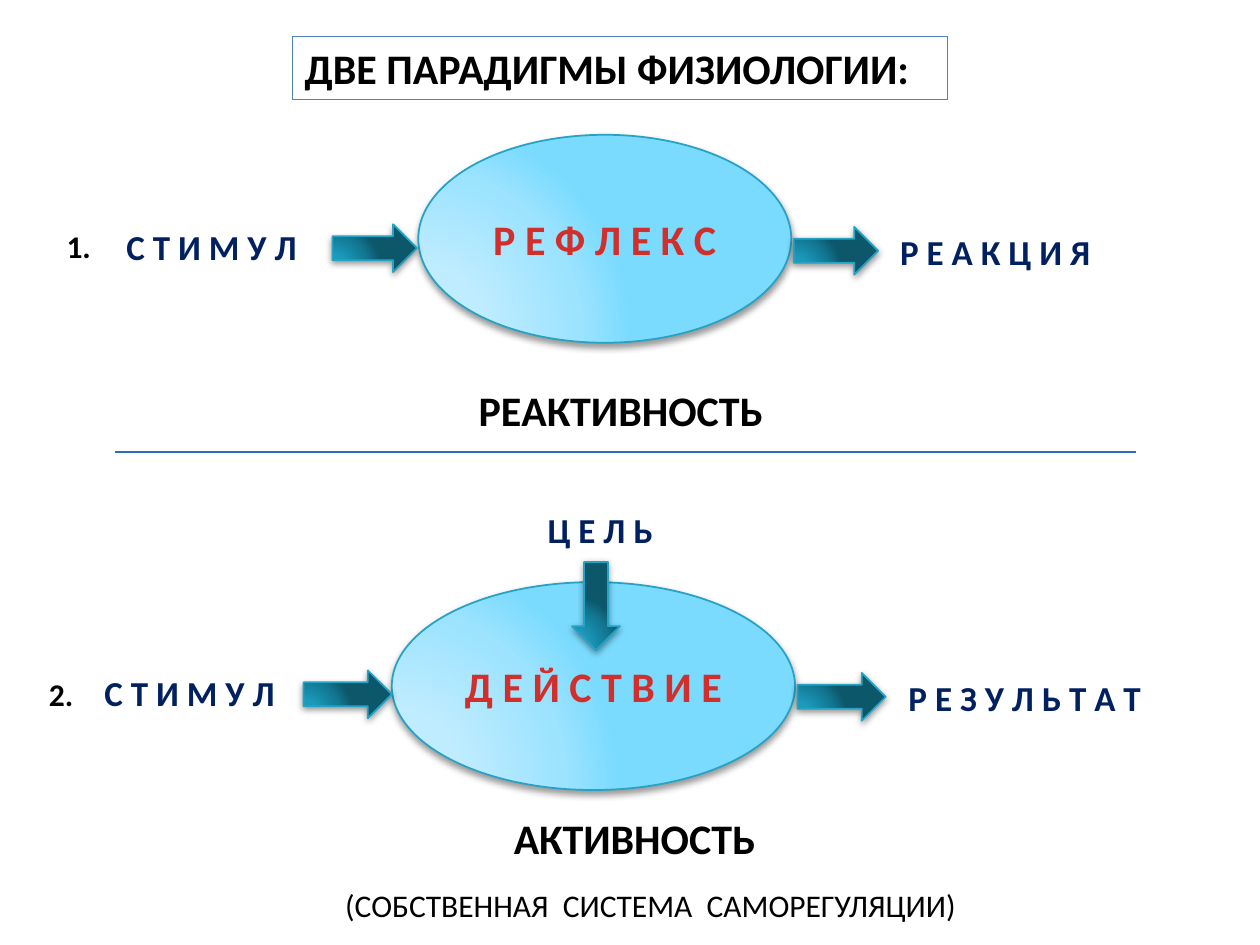
from dataclasses import dataclass

import pptx
import pptx.dml.color
import pptx.enum.shapes
import pptx.enum.text
import pptx.oxml
import pptx.oxml.ns
import pptx.util
from pptx.util import Inches

SHAPE = pptx.enum.shapes.MSO_SHAPE
ALIGN = pptx.enum.text.PP_ALIGN
ANCHOR = pptx.enum.text.MSO_ANCHOR
AUTO = pptx.enum.text.MSO_AUTO_SIZE

OVAL_STOPS = ((0, "C4EEFF"), (30, "BFECFF"), (75, "9DE3FF"), (100, "7ADBFF"))
ARROW_STOPS = ((0, "1DA0C3"), (30, "1C9ABC"), (75, "117691"), (100, "0D576B"))
EDGE = "26A2C4"

HEADING = {"size": 24, "bold": True, "color": "000000"}
NUMBER = {"size": 18, "bold": True, "color": "000000"}
NOTE = {"size": 18, "bold": False, "color": "000000"}
TERM = {"size": 20, "bold": True, "color": "002060"}
CORE = {"size": 24, "bold": True, "color": "D02F2C"}


@dataclass
class Box:
    x: float
    y: float
    w: float
    h: float

    def emu(self) -> list:
        return [Inches(v) for v in (self.x, self.y, self.w, self.h)]


@dataclass
class Label:
    text: str
    box: Box
    style: dict


@dataclass
class Paradigm:
    number: Label
    stimulus: Label
    outcome: Label
    core: Label
    arrows: tuple


def rgb(color: str) -> pptx.dml.color.RGBColor:
    return pptx.dml.color.RGBColor.from_string(color)


def write(tf, text: str, style: dict, align=None) -> None:
    p = tf.paragraphs[0]
    p.alignment = align
    r = p.add_run()
    r.text = text
    font = {"name": "Calibri", "size": pptx.util.Pt(style["size"]), "bold": style["bold"]}
    for key, value in font.items():
        setattr(r.font, key, value)
    r.font.color.rgb = rgb(style["color"])


def add_label(slide, label: Label, centred: bool = False):
    sp = slide.shapes.add_textbox(*label.box.emu())
    tf = sp.text_frame
    for key, value in {"word_wrap": centred, "auto_size": AUTO.SHAPE_TO_FIT_TEXT}.items():
        setattr(tf, key, value)
    write(tf, label.text, label.style, ALIGN.CENTER if centred else None)
    return sp


def set_line(line, color: str, width: float) -> None:
    line.color.rgb = rgb(color)
    line.width = pptx.util.Pt(width)


def add_glossy(slide, kind, box: Box, stops: tuple, alpha: int, distance: float):
    sp = slide.shapes.add_shape(kind, *box.emu())
    sp.fill.background()
    set_line(sp.line, EDGE, 1)
    sp.shadow.inherit = False
    spPr = sp._element.spPr
    ns = pptx.oxml.ns.nsdecls("a")
    gs = "".join(
        f'<a:gs pos="{pos * 1000}"><a:srgbClr val="{color}"/></a:gs>' for pos, color in stops
    )
    grad = pptx.oxml.parse_xml(
        f'<a:gradFill {ns} rotWithShape="1"><a:gsLst>{gs}</a:gsLst><a:path path="circle">'
        '<a:fillToRect l="5000" t="100000" r="120000" b="10000"/></a:path></a:gradFill>'
    )
    spPr.replace(spPr.find(pptx.oxml.ns.qn("a:noFill")), grad)
    shadow = pptx.oxml.parse_xml(
        f'<a:outerShdw {ns} blurRad="{pptx.util.Pt(4)}" dist="{pptx.util.Pt(distance)}" '
        'dir="5400000" rotWithShape="0"><a:srgbClr val="000000">'
        f'<a:alpha val="{alpha * 1000}"/></a:srgbClr></a:outerShdw>'
    )
    spPr.find(pptx.oxml.ns.qn("a:effectLst")).append(shadow)
    return sp


def add_arrow(slide, box: Box, rotation: float = 0) -> None:
    sp = add_glossy(slide, SHAPE.RIGHT_ARROW, box, ARROW_STOPS, 42, 1.6)
    sp.rotation = rotation


def add_oval(slide, label: Label) -> None:
    sp = add_glossy(slide, SHAPE.OVAL, label.box, OVAL_STOPS, 40, 2)
    sp.text_frame.vertical_anchor = ANCHOR.MIDDLE
    write(sp.text_frame, label.text, label.style, ALIGN.CENTER)


def add_paradigm(slide, item: Paradigm) -> None:
    add_label(slide, item.number)
    for label in (item.stimulus, item.outcome):
        add_label(slide, label, centred=True)
    add_oval(slide, item.core)
    for box in item.arrows:
        add_arrow(slide, box)


def add_divider(slide, x1: float, x2: float, y: float) -> None:
    sp = slide.shapes.add_connector(
        pptx.enum.shapes.MSO_CONNECTOR.STRAIGHT, *map(Inches, (x1, y, x2, y))
    )
    set_line(sp.line, "2C6CB9", 1)
    sp._element.spPr.append(pptx.oxml.parse_xml(f'<a:effectLst {pptx.oxml.ns.nsdecls("a")}/>'))


PARADIGMS = (
    Paradigm(
        Label("1.", Box(0.43, 1.75, 0.4, 0.4), NUMBER),
        Label("С Т И М У Л", Box(0.51, 1.74, 2.34, 0.44), TERM),
        Label("Р Е А К Ц И Я", Box(6.73, 1.78, 2.34, 0.44), TERM),
        Label("Р Е Ф Л Е К С", Box(3.32, 1.07, 2.96, 1.65), CORE),
        (Box(2.64, 1.78, 0.67, 0.38), Box(6.3, 1.8, 0.67, 0.38)),
    ),
    Paradigm(
        Label("2.", Box(0.29, 5.31, 0.4, 0.4), NUMBER),
        Label("С Т И М У Л", Box(0.28, 5.28, 2.45, 0.44), TERM),
        Label("Р Е З У Л Ь Т А Т ", Box(6.94, 5.32, 2.45, 0.44), TERM),
        Label("Д Е Й С Т В И Е", Box(3.11, 4.62, 3.2, 1.65), CORE),
        (Box(2.41, 5.32, 0.7, 0.38), Box(6.33, 5.34, 0.7, 0.38)),
    ),
)
TITLE = Label("ДВЕ ПАРАДИГМЫ ФИЗИОЛОГИИ:", Box(2.32, 0.29, 5.2, 0.5), HEADING)
GOAL = Label("Ц Е Л Ь ", Box(3.57, 3.99, 2.45, 0.44), TERM)
CAPTIONS = (
    Label("РЕАКТИВНОСТЬ", Box(3.7, 3, 2.48, 0.5), HEADING),
    Label("АКТИВНОСТЬ", Box(3.98, 6.4, 2.14, 0.5), HEADING),
    Label("(СОБСТВЕННАЯ  СИСТЕМА  САМОРЕГУЛЯЦИИ)", Box(2.64, 6.98, 5.1, 0.4), NOTE),
)


def main() -> None:
    prs = pptx.Presentation()
    prs.slide_width, prs.slide_height = Inches(10), Inches(7.5)
    slide = prs.slides.add_slide(prs.slide_layouts[6])
    set_line(add_label(slide, TITLE).line, "4F81BD", 0.75)
    for item in PARADIGMS:
        add_paradigm(slide, item)
    add_label(slide, GOAL, centred=True)
    add_arrow(slide, Box(4.38, 4.62, 0.7, 0.38), rotation=90)
    add_divider(slide, 0.91, 9.02, 3.59)
    for label in CAPTIONS:
        add_label(slide, label)
    prs.save("out.pptx")


if __name__ == "__main__":
    main()
